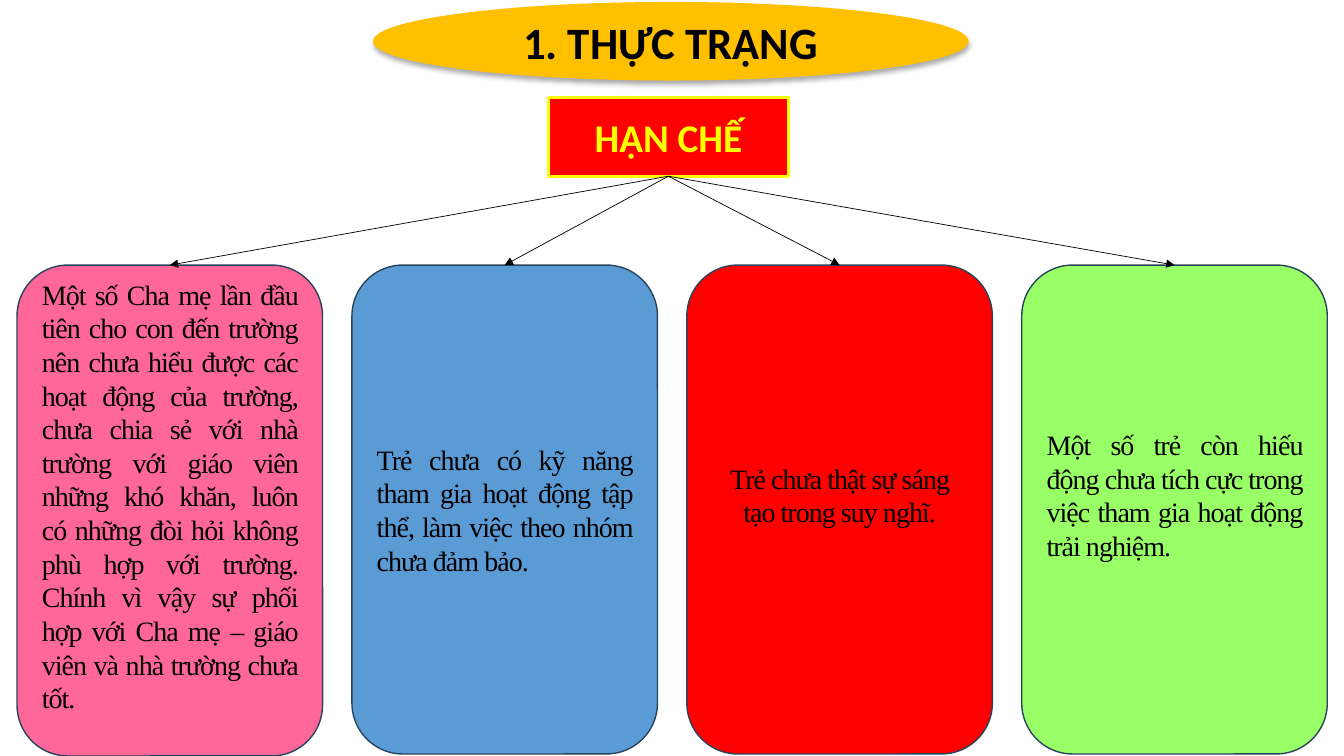
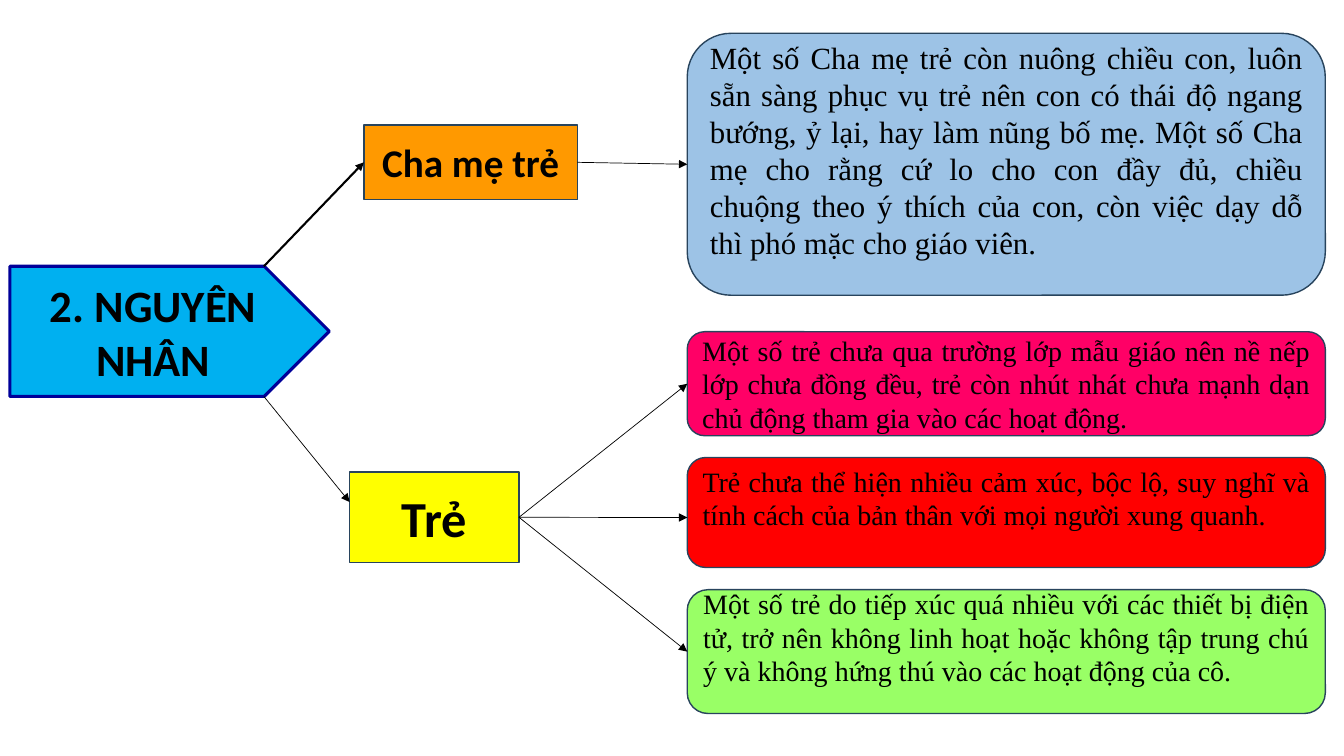
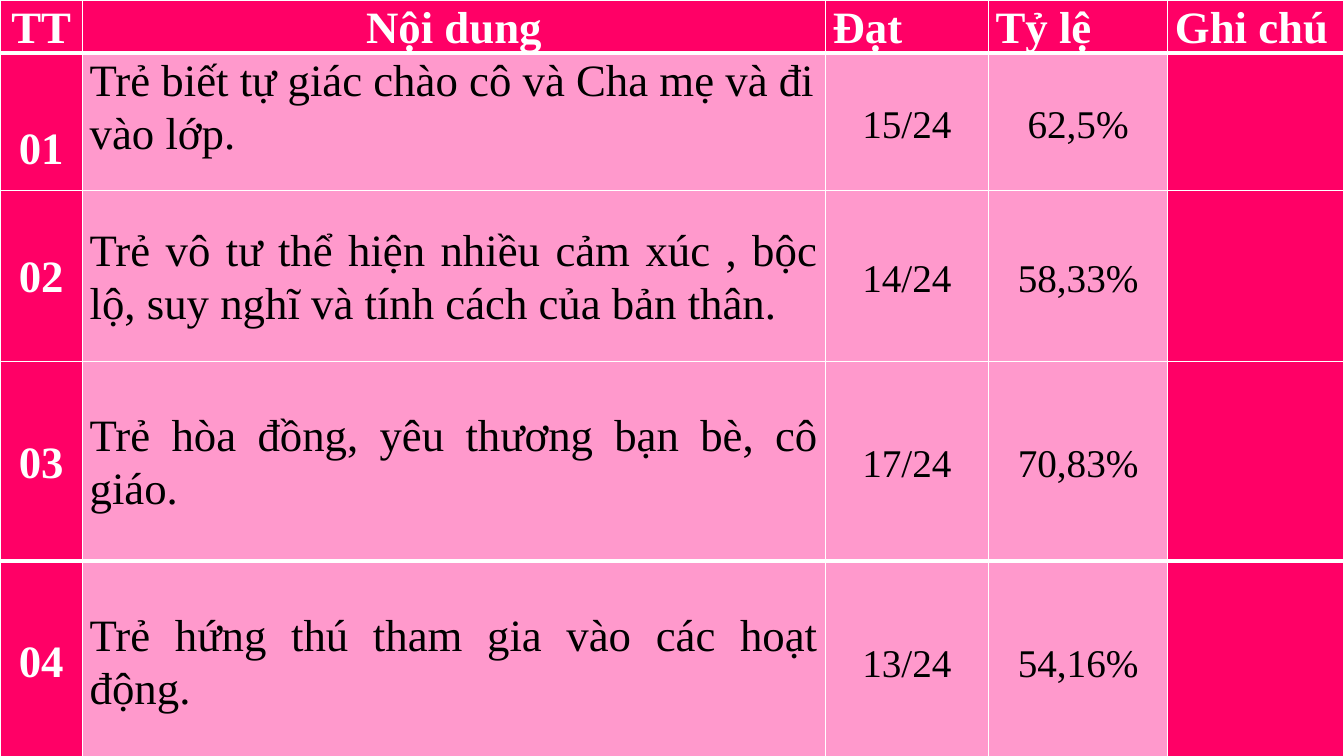
from lxml import etree
from pptx import Presentation
from pptx import util as u
from pptx.dml import color
from pptx.enum import shapes, text
from pptx.oxml import ns

COLORS = {
    "black": "000000", "white": "FFFFFF", "outline": "28445D",
    "gold": "FFC000", "red": "FF0000", "yellow": "FFFF00",
    "pink": "FF6699", "blue": "5B9BD5", "green": "99FF66",
    "sky": "00B0F0", "navy": "000099", "orange": "FF9900",
    "pale_blue": "9DC3E6", "magenta": "FF0066", "rose": "FF99CC",
}
SANS, SERIF = "Calibri", "Times New Roman"
TOP, LEFT, BOTTOM, RIGHT = range(4)
KIND = shapes.MSO_SHAPE
ALIGN = text.PP_ALIGN
MIDDLE = text.MSO_ANCHOR.MIDDLE


def rgb(name):
    return color.RGBColor.from_string(COLORS[name])


class Board:
    def __init__(self):
        self.deck = Presentation()
        self.deck.slide_width = u.Cm(33.87)
        self.deck.slide_height = u.Cm(19.05)
        self.page = None

    def new_page(self):
        self.page = self.deck.slides.add_slide(self.deck.slide_layouts[6])

    def set_text(self, para, words, size, font=SERIF, ink="black", bold=False,
                 align=ALIGN.JUSTIFY, tracking=0):
        para.text = words
        para.alignment = align
        para.font.size = u.Pt(size)
        para.font.name = font
        para.font.bold = bold
        para.font.color.rgb = rgb(ink)
        if tracking:
            para._p.pPr.find(ns.qn("a:defRPr")).set("spc", str(tracking))

    def box(self, kind, place, words, fill, size, line="outline", weight=1,
            lift=0, **style):
        box = self.page.shapes.add_shape(kind, *map(u.Cm, place))
        box.shadow.inherit = False
        box.fill.solid()
        box.fill.fore_color.rgb = rgb(fill)
        if line:
            box.line.color.rgb = rgb(line)
            box.line.width = u.Pt(weight)
        else:
            box.line.fill.background()
        frame = box.text_frame
        frame.word_wrap = True
        frame.vertical_anchor = MIDDLE
        frame.margin_bottom = u.Cm(0.13 + lift)
        self.set_text(frame.paragraphs[0], words, size, **style)
        return box

    def heading(self, kind, place, words, fill, size, ink="black", **style):
        return self.box(kind, place, words, fill, size, font=SANS, ink=ink,
                        bold=True, align=ALIGN.CENTER, **style)

    def card(self, place, words, fill, size=20, **style):
        return self.box(KIND.ROUNDED_RECTANGLE, place, words, fill, size, **style)

    def drop_shadow(self, box):
        effects = box._element.spPr.find(ns.qn("a:effectLst"))
        shadow = etree.SubElement(effects, ns.qn("a:outerShdw"), blurRad="44450",
                                  dist="27940", dir="5400000", algn="ctr")
        tone = etree.SubElement(shadow, ns.qn("a:srgbClr"), val=COLORS["black"])
        etree.SubElement(tone, ns.qn("a:alpha"), val="32000")

    def arrow(self, start=(0, 0), end=(0, 0), source=None, target=None, weight=0.5):
        arrow = self.page.shapes.add_connector(
            shapes.MSO_CONNECTOR.STRAIGHT, *map(u.Cm, start + end))
        if source:
            arrow.begin_connect(*source)
        if target:
            arrow.end_connect(*target)
        arrow.line.color.rgb = rgb("black")
        arrow.line.width = u.Pt(weight)
        props = arrow._element.spPr
        etree.SubElement(props.find(ns.qn("a:ln")), ns.qn("a:tailEnd"), type="triangle")
        etree.SubElement(props, ns.qn("a:effectLst"))

    def table(self, place, widths, heights):
        frame = self.page.shapes.add_table(len(heights), len(widths), *map(u.Cm, place))
        table = frame.table
        table.first_row = table.horz_banding = False
        for column, width in zip(table.columns, widths):
            column.width = u.Cm(width)
        for row, height in zip(table.rows, heights):
            row.height = u.Cm(height)
        return table

    def cell(self, cell, fill, words="", size=32, anchor=MIDDLE, top=0,
             spacing=1.07, above=1, below=1, **style):
        cell.margin_left = cell.margin_right = u.Cm(0.18)
        cell.margin_top, cell.margin_bottom = u.Cm(top), 0
        cell.vertical_anchor = anchor
        props = cell._tc.get_or_add_tcPr()
        for side, weight in (("L", 1), ("R", 1), ("T", above), ("B", below)):
            edge = etree.SubElement(props, ns.qn("a:ln" + side), w=str(int(u.Pt(weight))))
            paint = etree.SubElement(edge, ns.qn("a:solidFill"))
            etree.SubElement(paint, ns.qn("a:srgbClr"), val=COLORS["white"])
        cell.fill.solid()
        cell.fill.fore_color.rgb = rgb(fill)
        if words:
            para = cell.text_frame.paragraphs[0]
            para.line_spacing = spacing
            self.set_text(para, words, size, **style)


def limits_page(board):
    board.new_page()
    title = board.heading(KIND.OVAL, (9.4, 0.05, 15.01, 1.98), "1. THỰC TRẠNG",
                          "gold", 32, line=None)
    board.drop_shadow(title)
    parent = board.heading(KIND.RECTANGLE, (13.82, 2.46, 6.05, 1.98), "HẠN CHẾ",
                           "red", 28, ink="yellow", line="yellow", weight=2.25)
    limits = [
        ("Một số Cha mẹ lần đầu tiên cho con đến trường nên chưa hiểu được các hoạt "
         "động của trường, chưa chia sẻ với nhà trường với giáo viên những khó khăn, "
         "luôn có những đòi hỏi không phù hợp với trường. Chính vì vậy sự phối hợp với "
         "Cha mẹ – giáo viên và nhà trường chưa tốt.",
         "pink", 12.37, 0.74, ALIGN.JUSTIFY),
        ("Trẻ chưa có kỹ năng tham gia hoạt động tập thể, làm việc theo nhóm chưa đảm bảo.",
         "blue", 12.32, 0, ALIGN.JUSTIFY),
        ("Trẻ chưa thật sự sáng tạo trong suy nghĩ.",
         "red", 12.32, 0.74, ALIGN.CENTER),
        ("Một số trẻ còn hiếu động chưa tích cực trong việc tham gia hoạt động trải nghiệm.",
         "green", 12.32, 0.74, ALIGN.JUSTIFY),
    ]
    for index, (words, fill, height, lift, align) in enumerate(limits):
        card = board.card((0.43 + 8.44 * index, 6.68, 7.7, height), words, fill,
                          lift=lift, align=align, tracking=-70)
        board.arrow(source=(parent, BOTTOM), target=(card, TOP))


def causes_page(board):
    board.new_page()
    board.heading(KIND.PENTAGON, (0.25, 6.71, 8.05, 3.28), "2. NGUYÊN NHÂN",
                  "sky", 32, line="navy", weight=2.25)
    parents = board.heading(KIND.RECTANGLE, (9.17, 3.15, 5.38, 1.88), "Cha mẹ trẻ",
                            "orange", 28)
    children = board.heading(KIND.RECTANGLE, (8.81, 11.89, 4.27, 2.29), "Trẻ",
                             "yellow", 36)
    board.arrow(start=(6.65, 6.71), target=(parents, LEFT), weight=1.5)
    board.arrow(start=(6.65, 9.99), end=(8.81, 12.65))
    causes = [
        (parents, 0.84, 6.6, "pale_blue", 22, 0.74,
         "Một số Cha mẹ trẻ còn nuông chiều con, luôn sẵn sàng phục vụ trẻ nên con có "
         "thái độ ngang bướng, ỷ lại, hay làm nũng bố mẹ. Một số Cha mẹ cho rằng cứ lo "
         "cho con đầy đủ, chiều chuộng theo ý thích của con, còn việc dạy dỗ thì phó mặc "
         "cho giáo viên."),
        (children, 8.36, 2.62, "magenta", 20, 0,
         "Một số trẻ chưa qua trường lớp mẫu giáo nên nề nếp lớp chưa đồng đều, trẻ còn "
         "nhút nhát chưa mạnh dạn chủ động tham gia vào các hoạt động."),
        (children, 11.53, 2.77, "red", 20, 0.74,
         "Trẻ chưa thể hiện nhiều cảm xúc, bộc lộ, suy nghĩ và tính cách của bản thân "
         "với mọi người xung quanh."),
        (children, 14.86, 3.12, "green", 20, 0.74,
         "Một số trẻ do tiếp xúc quá nhiều với các thiết bị điện tử, trở nên không linh "
         "hoạt hoặc không tập trung chú ý và không hứng thú vào các hoạt động của cô."),
    ]
    for origin, top, height, fill, size, lift, words in causes:
        card = board.card((17.32, top, 16.08, height), words, fill, size, lift=lift)
        if fill == "red":
            board.arrow(source=(origin, RIGHT), end=(17.32, 13.04))
        else:
            board.arrow(source=(origin, RIGHT), target=(card, LEFT))


def results_page(board):
    board.new_page()
    widths = [2.08, 18.72, 4.11, 4.52, 4.44]
    heights = [1.09, 3.45, 4.32, 5.03, 5.03]
    table = board.table((0, 0, sum(widths), sum(heights)), widths, heights)
    heads = ["TT", "Nội dung", "Đạt", "Tỷ lệ", "Ghi chú"]
    label = {"ink": "white", "bold": True}
    for column, words in enumerate(heads):
        board.cell(table.cell(0, column), "magenta", words, below=3,
                   anchor=text.MSO_ANCHOR.TOP,
                   align=ALIGN.CENTER if column < 2 else ALIGN.JUSTIFY, **label)
    results = [
        ("Trẻ biết tự giác chào cô và Cha mẹ và đi vào lớp.", "15/24", "62,5%"),
        ("Trẻ vô tư thể hiện nhiều cảm xúc , bộc lộ, suy nghĩ và tính cách của bản thân.",
         "14/24", "58,33%"),
        ("Trẻ hòa đồng, yêu thương bạn bè, cô giáo.", "17/24", "70,83%"),
        ("Trẻ hứng thú tham gia vào các hoạt động.", "13/24", "54,16%"),
    ]
    for row, (content, passed, rate) in enumerate(results, 1):
        first = row == 1
        edges = {"above": 3 if row in (1, 4) else 1, "below": 3 if row == 3 else 1}
        anchor = text.MSO_ANCHOR.TOP if first else MIDDLE
        board.cell(table.cell(row, 0), "magenta", f"{row:02}", anchor=anchor,
                   top=1.7 if first else 0, align=ALIGN.CENTER, **label, **edges)
        board.cell(table.cell(row, 1), "rose", content, anchor=anchor,
                   align=ALIGN.LEFT if first else ALIGN.JUSTIFY, **edges)
        for column, words in enumerate((passed, rate), 2):
            board.cell(table.cell(row, column), "rose", words, 28, spacing=1.15,
                       align=ALIGN.CENTER, **edges)
        board.cell(table.cell(row, 4), "magenta", **edges)


def main():
    board = Board()
    limits_page(board)
    causes_page(board)
    results_page(board)
    board.deck.save("out.pptx")


if __name__ == "__main__":
    main()
